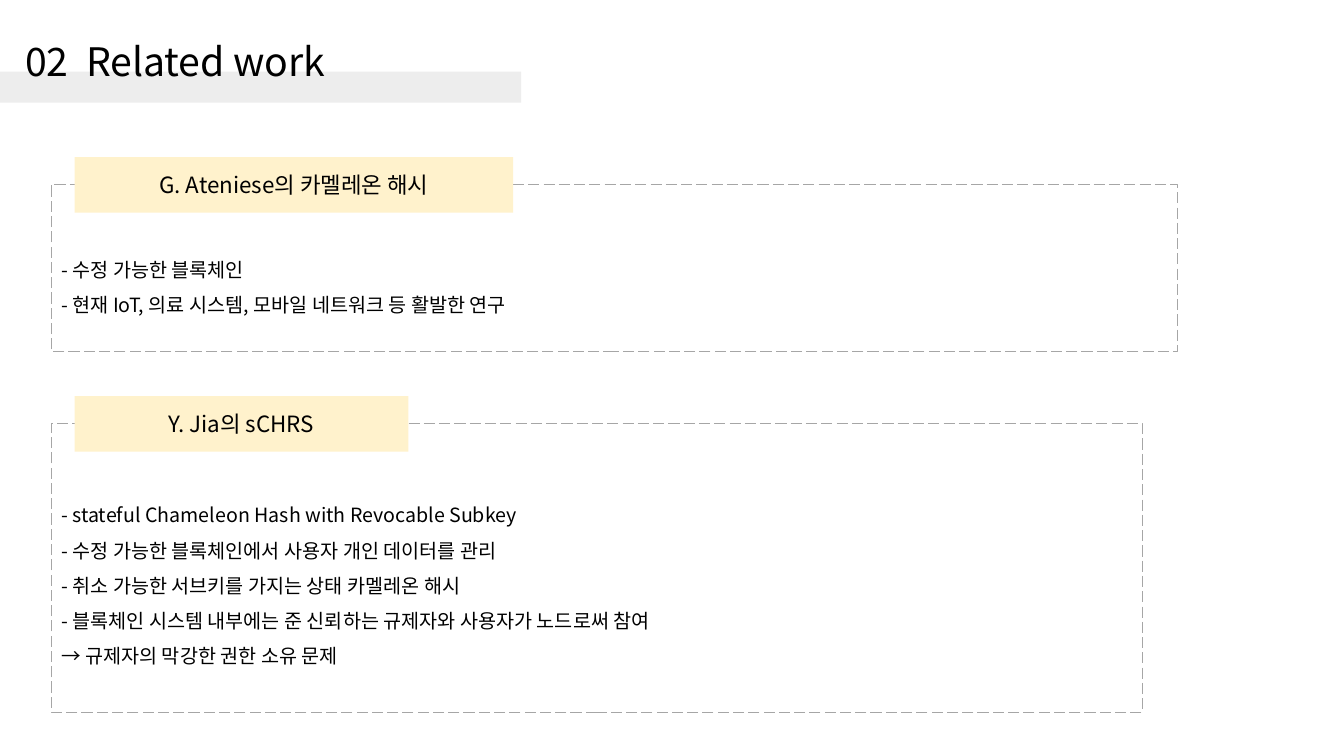
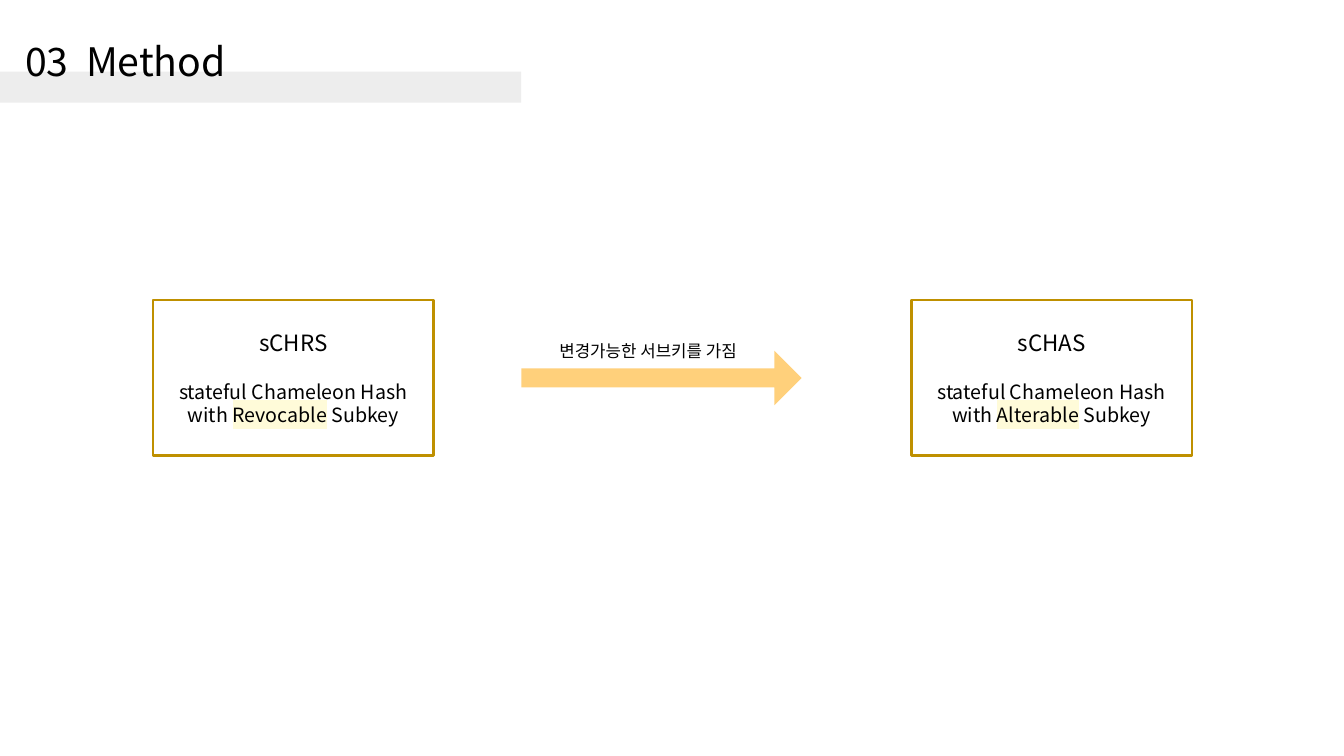
from pptx import Presentation
from pptx.dml.color import RGBColor
from pptx.enum.dml import MSO_LINE
from pptx.enum.shapes import MSO_SHAPE as Shape
from pptx.enum.text import MSO_ANCHOR as Anchor, PP_ALIGN as Align
from pptx.oxml.ns import qn
from pptx.util import Inches, Pt
from lxml.etree import SubElement

FONT = "Noto Sans CJK KR"
BLACK, WHITE = "000000", "FFFFFF"
BAND, DASH, LABEL = "EDEDED", "A6A6A6", "FFF2CC"
GOLD, ARROW, HIGHLIGHT = "BF9000", "FFD07B", "FFFBD9"


def color(value):
    return RGBColor.from_string(value)


class Deck:
    """Hold the shared style and the current slide, and draw its elements."""

    def __init__(self):
        self.presentation = Presentation()
        self.presentation.slide_width = Inches(13.33)
        self.presentation.slide_height = Inches(7.5)
        self.slide = None

    def add_slide(self, title):
        self.slide = self.presentation.slides.add_slide(self.presentation.slide_layouts[6])
        self.shape(0, 0.71, 5.17, 0.31, fill=BAND)
        frame = self.text_box(0.15, 0.15, 4.84, 0.97, title, 28)
        frame.vertical_anchor = Anchor.MIDDLE
        frame.paragraphs[0].line_spacing = 0.9

    def shape(self, left, top, width, height, kind=Shape.RECTANGLE, fill=None, line=None, weight=1):
        shape = self.slide.shapes.add_shape(
            kind, Inches(left), Inches(top), Inches(width), Inches(height))
        shape.shadow.inherit = False
        if fill:
            shape.fill.solid()
            shape.fill.fore_color.rgb = color(fill)
        else:
            shape.fill.background()
        if line:
            shape.line.color.rgb = color(line)
            shape.line.width = Pt(weight)
        else:
            shape.line.fill.background()
        shape.text_frame.word_wrap = True
        shape.text_frame.vertical_anchor = Anchor.MIDDLE
        return shape

    def format_runs(self, paragraph, size, align=Align.LEFT):
        paragraph.alignment = align
        for run in paragraph.runs:
            run.font.size = Pt(size)
            run.font.name = FONT
            run.font.color.rgb = color(BLACK)
            SubElement(run.font._element, qn("a:ea"), typeface=FONT)

    def highlight(self, run):
        properties = run.font._element
        mark = SubElement(properties, qn("a:highlight"))
        SubElement(mark, qn("a:srgbClr"), val=HIGHLIGHT)
        properties.find(qn("a:latin")).addprevious(mark)

    def text_box(self, left, top, width, height, text, size, wrap=True):
        box = self.slide.shapes.add_textbox(
            Inches(left), Inches(top), Inches(width), Inches(height))
        frame = box.text_frame
        frame.word_wrap = wrap
        frame.text = text
        self.format_runs(frame.paragraphs[0], size)
        return frame

    def panel(self, top, width, height, label, label_width, lines, text_drop):
        left = 0.51
        panel = self.shape(left, top, width, height, line=DASH)
        panel.line.dash_style = MSO_LINE.LONG_DASH
        frame = panel.text_frame
        frame.margin_top = Inches(0.05 + text_drop)
        frame.text = "\n".join(lines)
        for paragraph in frame.paragraphs:
            paragraph.line_spacing = 1.5
            self.format_runs(paragraph, 14)
        tab = self.shape(left + 0.23, top - 0.27, label_width, 0.55, fill=LABEL)
        tab.text_frame.text = label
        self.format_runs(tab.text_frame.paragraphs[0], 16, Align.CENTER)

    def scheme(self, left, name, before, marked, after):
        frame = self.shape(left, 2.98, 2.78, 1.54, fill=WHITE, line=GOLD, weight=1.5).text_frame
        frame.text = name
        self.format_runs(frame.paragraphs[0], 16, Align.CENTER)
        description = frame.add_paragraph()
        description.space_before = Pt(17)
        for text in (before, marked, after):
            description.add_run().text = text
        self.format_runs(description, 14, Align.CENTER)
        self.highlight(description.runs[1])

    def arrow(self, left, top, width, height):
        arrow = self.shape(left, top, width, height, Shape.RIGHT_ARROW, fill=ARROW)
        arrow.adjustments[0] = 0.35
        arrow.adjustments[1] = 0.5

    def save(self):
        self.presentation.save("out.pptx")


def main():
    deck = Deck()

    deck.add_slide("02  Related work")
    deck.panel(1.83, 11.17, 1.66, "G. Ateniese의 카멜레온 해시", 4.35, [
        "- 수정 가능한 블록체인",
        "- 현재 IoT, 의료 시스템, 모바일 네트워크 등 활발한 연구",
    ], text_drop=0.26)
    deck.panel(4.2, 10.82, 2.87, "Y. Jia의 sCHRS", 3.31, [
        "- stateful Chameleon Hash with Revocable Subkey",
        "- 수정 가능한 블록체인에서 사용자 개인 데이터를 관리",
        "- 취소 가능한 서브키를 가지는 상태 카멜레온 해시",
        "- 블록체인 시스템 내부에는 준 신뢰하는 규제자와 사용자가 노드로써 참여",
        "→ 규제자의 막강한 권한 소유 문제",
    ], text_drop=0.23)

    deck.add_slide("03  Method")
    for left, name, marked in ((1.52, "sCHRS", "Revocable"), (9.04, "sCHAS", "Alterable")):
        deck.scheme(left, name, "stateful Chameleon Hash with ", marked, " Subkey")
    deck.arrow(5.17, 3.48, 2.78, 0.54)
    deck.text_box(5.45, 3.33, 2.03, 0.3, "변경가능한 서브키를 가짐", 12, wrap=False)

    deck.save()


if __name__ == "__main__":
    main()
